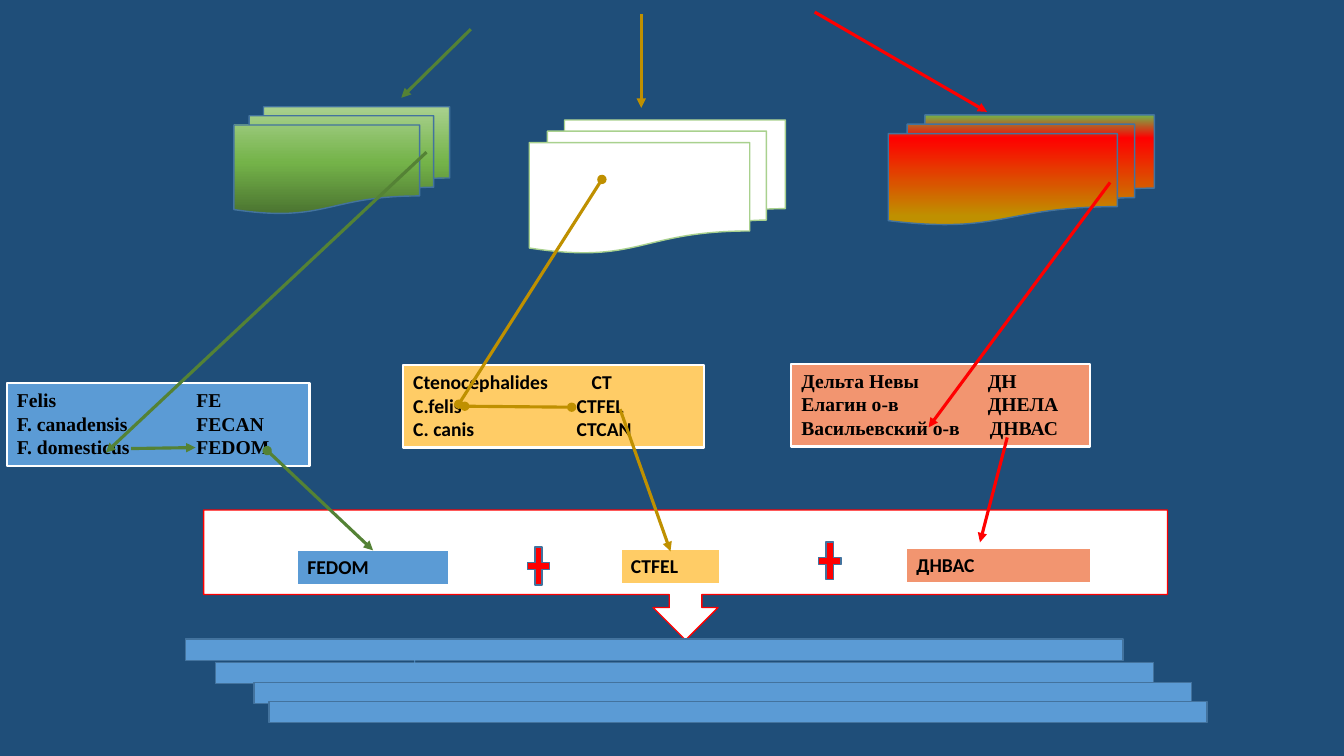
from typing import NamedTuple

from lxml import etree
from pptx import Presentation
from pptx.dml.color import RGBColor
from pptx.enum.shapes import MSO_CONNECTOR, MSO_SHAPE
from pptx.enum.text import MSO_ANCHOR, MSO_AUTO_SIZE, PP_ALIGN
from pptx.oxml.ns import qn
from pptx.util import Inches, Pt

RECTANGLE = MSO_SHAPE.RECTANGLE
DOCUMENTS = MSO_SHAPE.FLOWCHART_MULTIDOCUMENT
CALLOUT = MSO_SHAPE.DOWN_ARROW_CALLOUT
PLUS = MSO_SHAPE.MATH_PLUS
STRAIGHT = MSO_CONNECTOR.STRAIGHT

NAVY, WHITE, BLACK, RED = "1F4E79", "FFFFFF", "000000", "FF0000"
BLUE, EDGE_BLUE, YELLOW, SALMON = "5B9BD5", "43739E", "FFCC66", "F29570"
GREEN, LIGHT_GREEN, GOLD = "548235", "A9D18E", "BF9000"
SANS, SERIF = "Calibri", "Times New Roman"

Gradient = tuple[tuple[int, str], ...]
GREEN_FADE: Gradient = ((0, "4B7430"), (48, "74B349"), (100, LIGHT_GREEN))
RED_FADE: Gradient = ((0, GOLD), (8, GOLD), (79, RED), (100, "74B349"), (100, LIGHT_GREEN))


class Block(NamedTuple):
    kind: MSO_SHAPE
    left: float
    top: float
    width: float
    height: float
    fill: str | Gradient
    line: str = EDGE_BLUE
    line_width: float = 1


class Row(NamedTuple):
    name: str
    code: str = ""
    code_offset: float = 0


class Label(NamedTuple):
    left: float
    top: float
    width: float
    height: float
    fill: str
    font: str
    rows: tuple[Row, ...]


class Link(NamedTuple):
    start: tuple[float, float]
    end: tuple[float, float]
    color: str
    tail: str = "triangle"
    head: str = ""
    width: float = 2.25


RESULT_CALLOUT = Block(CALLOUT, 2.02, 5.06, 9.56, 1.29, WHITE, RED)

ENTRY_ARROWS = (
    Link((4.67, 0.29), (3.98, 0.97), GREEN),
    Link((6.36, 0.14), (6.36, 1.07), GOLD),
    Link((8.08, 0.12), (9.79, 1.11), RED),
)

DOCUMENT_STACKS = (
    Block(DOCUMENTS, 2.32, 1.06, 2.14, 1.06, GREEN_FADE),
    Block(DOCUMENTS, 5.25, 1.19, 2.54, 1.32, WHITE, LIGHT_GREEN),
    Block(DOCUMENTS, 8.81, 1.14, 2.64, 1.09, RED_FADE),
)

LABELS = (
    Label(2.95, 5.46, 1.5, 0.34, BLUE, SANS, (Row("FEDOM"),)),
    Label(6.16, 5.45, 0.98, 0.34, YELLOW, SANS, (Row("CTFEL"),)),
    Label(8.99, 5.44, 1.83, 0.34, SALMON, SANS, (Row("ДНВАС"),)),
    Label(0.07, 3.8, 3, 0.82, BLUE, SERIF, (
        Row("Felis", "FE", 1.78),
        Row("F. canadensis", "FECAN", 1.78),
        Row("F. domesticus", "FEDOM", 1.78),
    )),
    Label(4, 3.62, 2.98, 0.82, YELLOW, SANS, (
        Row("Ctenocephalides", "CT", 1.77),
        Row("C.felis", "CTFEL", 1.62),
        Row("C. canis", "CTCAN", 1.62),
    )),
    Label(7.85, 3.61, 2.96, 0.82, SALMON, SERIF, (
        Row("Дельта Невы", "ДН", 1.85),
        Row("Елагин о-в", "ДНЕЛА", 1.85),
        Row("Васильевский о-в", "ДНВАС", 1.87),
    )),
)

LOOKUP_LINKS = (
    Link((4.23, 1.51), (1.05, 4.49), GREEN),
    Link((5.97, 1.78), (4.55, 4.01), GOLD, "oval", "oval"),
    Link((11.01, 1.81), (9.21, 4.24), RED),
    Link((6.15, 4.06), (6.65, 5.47), GOLD),
    Link((9.99, 4.34), (9.72, 5.38), RED),
    Link((2.65, 4.47), (3.7, 5.46), GREEN, head="oval"),
)

PLUS_SIGNS = tuple(
    Block(PLUS, left, top, 0.3, 0.51, RED) for left, top in ((5.19, 5.36), (8.08, 5.31))
)

RECORD_BARS = tuple(
    Block(RECTANGLE, left, top, 9.3, 0.21, BLUE)
    for left, top in ((2.14, 6.57), (1.84, 6.34), (2.52, 6.77), (2.67, 6.96))
)

ROW_LINKS = (
    Link((4.12, 6.45), (4.11, 6.64), BLUE, tail="", width=0.5),
    Link((1.3, 4.45), (1.94, 4.44), GREEN),
    Link((4.61, 4.03), (5.67, 4.04), GOLD, "oval", "oval"),
)


def paint(color_holder, color: str) -> None:
    """Give a fill a solid colour."""
    color_holder.solid()
    color_holder.fore_color.rgb = RGBColor.from_string(color)


def paint_gradient(shape, stops: Gradient) -> None:
    """Fill a shape with colour stops running from bottom to top."""
    shape.fill.gradient()
    shape.fill.gradient_angle = 90
    stop_list = next(shape._element.spPr.iter(qn("a:gsLst")))
    for old_stop in list(stop_list):
        stop_list.remove(old_stop)
    for percent, color in stops:
        stop = etree.SubElement(stop_list, qn("a:gs"), pos=str(percent * 1000))
        etree.SubElement(stop, qn("a:srgbClr"), val=color)


def draw_block(slide, block: Block):
    box = (Inches(length) for length in block[1:5])
    shape = slide.shapes.add_shape(block.kind, *box)
    shape.shadow.inherit = False
    if isinstance(block.fill, str):
        paint(shape.fill, block.fill)
    else:
        paint_gradient(shape, block.fill)
    paint(shape.line.fill, block.line)
    shape.line.width = Pt(block.line_width)
    return shape


def draw_label(slide, label: Label) -> None:
    shape = draw_block(slide, Block(RECTANGLE, *label[:5], WHITE, 1.5))
    frame = shape.text_frame
    frame_format = {
        "word_wrap": True,
        "vertical_anchor": MSO_ANCHOR.TOP,
        "auto_size": MSO_AUTO_SIZE.SHAPE_TO_FIT_TEXT,
    }
    for name, value in frame_format.items():
        setattr(frame, name, value)
    for index, row in enumerate(label.rows):
        paragraph = frame.add_paragraph() if index else frame.paragraphs[0]
        paragraph.alignment = PP_ALIGN.LEFT
        run = paragraph.add_run()
        run.text = f"{row.name}\t{row.code}" if row.code else row.name
        for name, value in {"name": label.font, "size": Pt(14), "bold": True}.items():
            setattr(run.font, name, value)
        paint(run.font.fill, BLACK)
        if row.code:
            tabs = etree.SubElement(paragraph._p.get_or_add_pPr(), qn("a:tabLst"))
            etree.SubElement(tabs, qn("a:tab"), pos=str(Inches(row.code_offset)), algn="l")


def draw_link(slide, link: Link) -> None:
    ends = (Inches(length) for length in (*link.start, *link.end))
    connector = slide.shapes.add_connector(STRAIGHT, *ends)
    paint(connector.line.fill, link.color)
    connector.line.width = Pt(link.width)
    line = connector.line._get_or_add_ln()
    for tag, kind in (("a:headEnd", link.head), ("a:tailEnd", link.tail)):
        if kind:
            etree.SubElement(line, qn(tag), type=kind)
    etree.SubElement(connector._element.spPr, qn("a:effectLst"))


def main() -> None:
    presentation = Presentation()
    presentation.slide_width = Inches(13.33)
    presentation.slide_height = Inches(7.5)
    slide = presentation.slides.add_slide(presentation.slide_layouts[6])
    paint(slide.background.fill, NAVY)

    # Parts from back to front
    layers = (
        (draw_block, (RESULT_CALLOUT,)),
        (draw_link, ENTRY_ARROWS),
        (draw_block, DOCUMENT_STACKS),
        (draw_label, LABELS),
        (draw_link, LOOKUP_LINKS),
        (draw_block, PLUS_SIGNS + RECORD_BARS),
        (draw_link, ROW_LINKS),
    )
    for draw, items in layers:
        for item in items:
            draw(slide, item)
    presentation.save("out.pptx")


if __name__ == "__main__":
    main()
